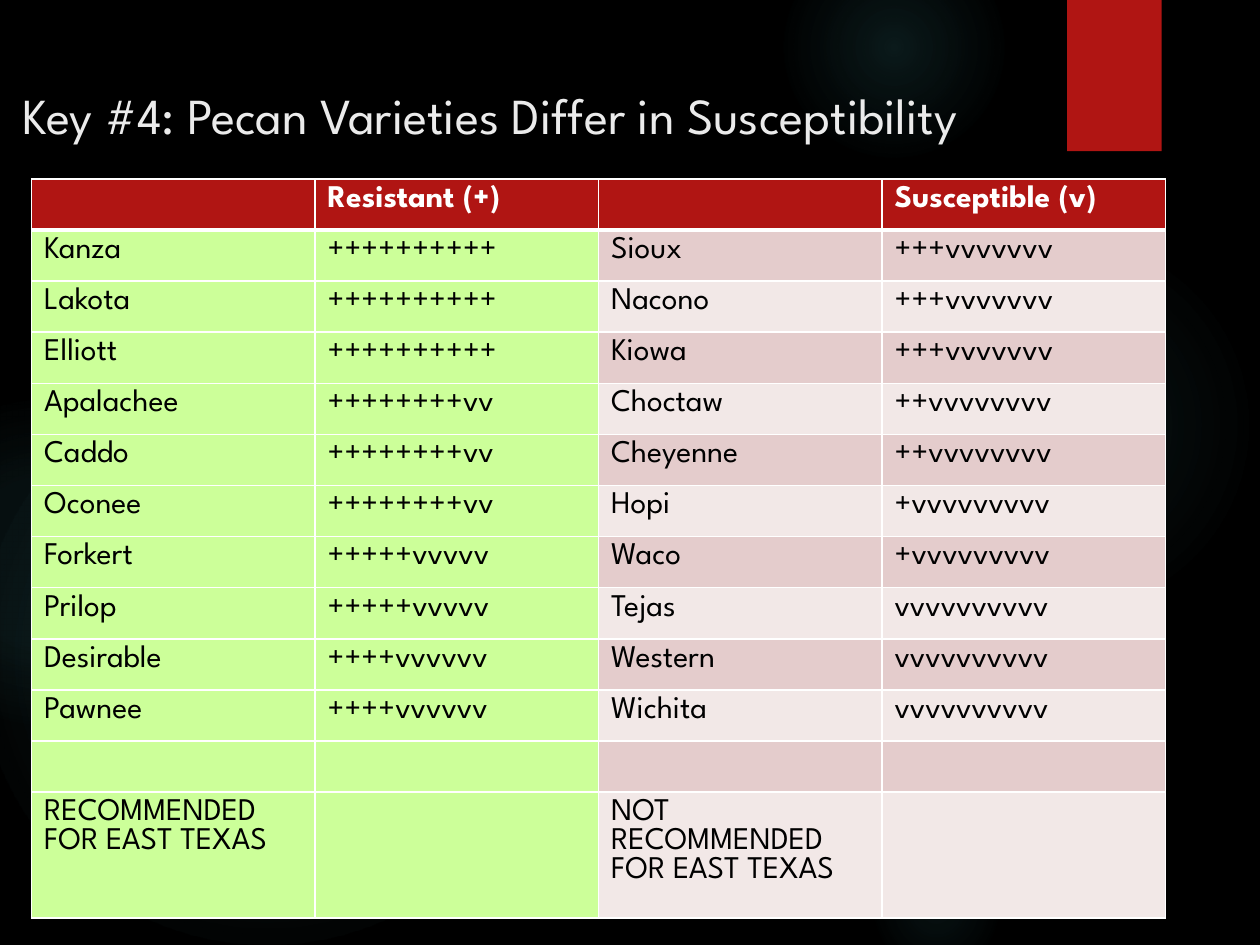
from lxml.etree import SubElement
from pptx import Presentation
from pptx.dml.color import RGBColor
from pptx.enum.shapes import MSO_SHAPE
from pptx.enum.text import MSO_ANCHOR
from pptx.oxml import parse_xml
from pptx.oxml.ns import nsdecls, qn
from pptx.util import Inches, Pt

FONT = "League Spartan"
RED, GREEN, WHITE, GLOW = "B01513", "CCFF99", "FFFFFF", "50B9C1"
PINKS = ["E4CCCC", "F2E8E7"]

# Left, top, diameter, then (stop %, opacity %) pairs
GLOWS = [
    (6.89, 1.83, 3.08, [(0, 7), (36, 6), (69, 0)]),
    (6.22, -0.5, 1.75, [(0, 14), (36, 7), (73, 0)]),
    (6.89, 6.67, 1.08, [(0, 9), (36, 5), (66, 0)]),
    (-0.17, 2.92, 4.58, [(0, 11), (36, 10), (75, 0)]),
    (-0.92, 3.17, 2.58, [(0, 8), (36, 8), (72, 0)]),
]

# Resistant variety, its plus marks, susceptible variety, its plus marks
VARIETIES = [
    ("Kanza", 10, "Sioux", 3),
    ("Lakota", 10, "Nacono", 3),
    ("Elliott", 10, "Kiowa", 3),
    ("Apalachee", 8, "Choctaw", 2),
    ("Caddo", 8, "Cheyenne", 2),
    ("Oconee", 8, "Hopi", 1),
    ("Forkert", 5, "Waco", 1),
    ("Prilop", 5, "Tejas", 0),
    ("Desirable", 4, "Western", 0),
    ("Pawnee", 4, "Wichita", 0),
]


def color(value):
    return RGBColor.from_string(value)


def rating(plus_count):
    return "+" * plus_count + "v" * (10 - plus_count)


def style_para(para, size, value, bold=False):
    para.font.name = FONT
    para.font.size = Pt(size)
    para.font.bold = bold
    para.font.color.rgb = color(value)


def add_plain_shape(page, kind, left, top, width, height):
    shape = page.shapes.add_shape(
        kind, Inches(left), Inches(top), Inches(width), Inches(height))
    shape.line.fill.background()
    shape.shadow.inherit = False
    return shape


def add_glow(page, left, top, size, stops):
    glow = add_plain_shape(page, MSO_SHAPE.OVAL, left, top, size, size)
    stop_xml = "".join(
        f'<a:gs pos="{pos * 1000}"><a:srgbClr val="{GLOW}">'
        f'<a:alpha val="{opacity * 1000}"/></a:srgbClr></a:gs>'
        for pos, opacity in stops)
    gradient = parse_xml(
        f'<a:gradFill {nsdecls("a")} rotWithShape="1"><a:gsLst>{stop_xml}</a:gsLst>'
        '<a:path path="circle"><a:fillToRect l="50000" t="50000" r="50000" b="50000"/>'
        '</a:path></a:gradFill>')
    glow.element.spPr.find(qn("a:prstGeom")).addnext(gradient)


def add_ribbon(page, left, top, width, height):
    ribbon = add_plain_shape(page, MSO_SHAPE.RECTANGLE, left, top, width, height)
    ribbon.fill.solid()
    ribbon.fill.fore_color.rgb = color(RED)
    effects = ribbon.element.spPr.find(qn("a:effectLst"))
    effects.append(parse_xml(
        f'<a:outerShdw {nsdecls("a")} blurRad="{Pt(3)}" dist="{Pt(2)}" dir="5400000">'
        '<a:srgbClr val="000000"><a:alpha val="45000"/></a:srgbClr></a:outerShdw>'))


def add_title(page, left, top, width, height, text):
    box = page.shapes.add_textbox(
        Inches(left), Inches(top), Inches(width), Inches(height))
    frame = box.text_frame
    frame.word_wrap = True
    frame.vertical_anchor = MSO_ANCHOR.MIDDLE
    frame.margin_bottom = Inches(0.15)
    frame.text = text
    style_para(frame.paragraphs[0], 28.8, "EBEBEB")


def set_borders(cell, widths):
    """Draw white borders; widths are points for left, right, top, bottom."""
    properties = cell._tc.get_or_add_tcPr()
    for index, (side, width) in enumerate(zip(["lnL", "lnR", "lnT", "lnB"], widths)):
        line = parse_xml(f'<a:{side} {nsdecls("a")} w="{Pt(width)}"/>')
        fill = SubElement(line, qn("a:solidFill"))
        SubElement(fill, qn("a:srgbClr"), val=WHITE)
        properties.insert(index, line)


def add_variety_table(page, left, top, width, height):
    rows = [("", "Resistant (+)", "", "Susceptible (v)")]
    rows += [(good, rating(good_plus), poor, rating(poor_plus))
             for good, good_plus, poor, poor_plus in VARIETIES]
    rows += [("",) * 4,
             ("RECOMMENDED FOR EAST TEXAS", "", "NOT RECOMMENDED FOR EAST TEXAS", "")]

    table = page.shapes.add_table(
        len(rows), 4, Inches(left), Inches(top), Inches(width), Inches(height)).table
    last = len(rows) - 1
    for index, row in enumerate(table.rows):
        row.height = Inches(1) if index == last else Inches((height - 1) / last)

    for row_index, texts in enumerate(rows):
        header = row_index == 0
        for column, text in enumerate(texts):
            cell = table.cell(row_index, column)
            cell.text = text
            style_para(cell.text_frame.paragraphs[0], 18,
                       WHITE if header else "000000", header)
            pink = PINKS[(row_index - 1) % 2]
            cell.fill.solid()
            cell.fill.fore_color.rgb = color(
                RED if header else GREEN if column < 2 else pink)
            set_borders(cell, (1, 1, 3 if row_index == 1 else 1, 3 if header else 1))


def main():
    deck = Presentation()
    deck.slide_width, deck.slide_height = Inches(10), Inches(7.5)
    page = deck.slides.add_slide(deck.slide_layouts[6])

    # Backdrop
    page.background.fill.solid()
    page.background.fill.fore_color.rgb = color("000000")
    for glow in GLOWS:
        add_glow(page, *glow)
    add_ribbon(page, 8.47, 0, 0.75, 1.2)

    # Content
    add_title(page, 0.08, 0.54, 9.83, 0.83,
              "Key #4: Pecan Varieties Differ in Susceptibility")
    add_variety_table(page, 0.25, 1.42, 9, 5.87)
    deck.save("out.pptx")


if __name__ == "__main__":
    main()
